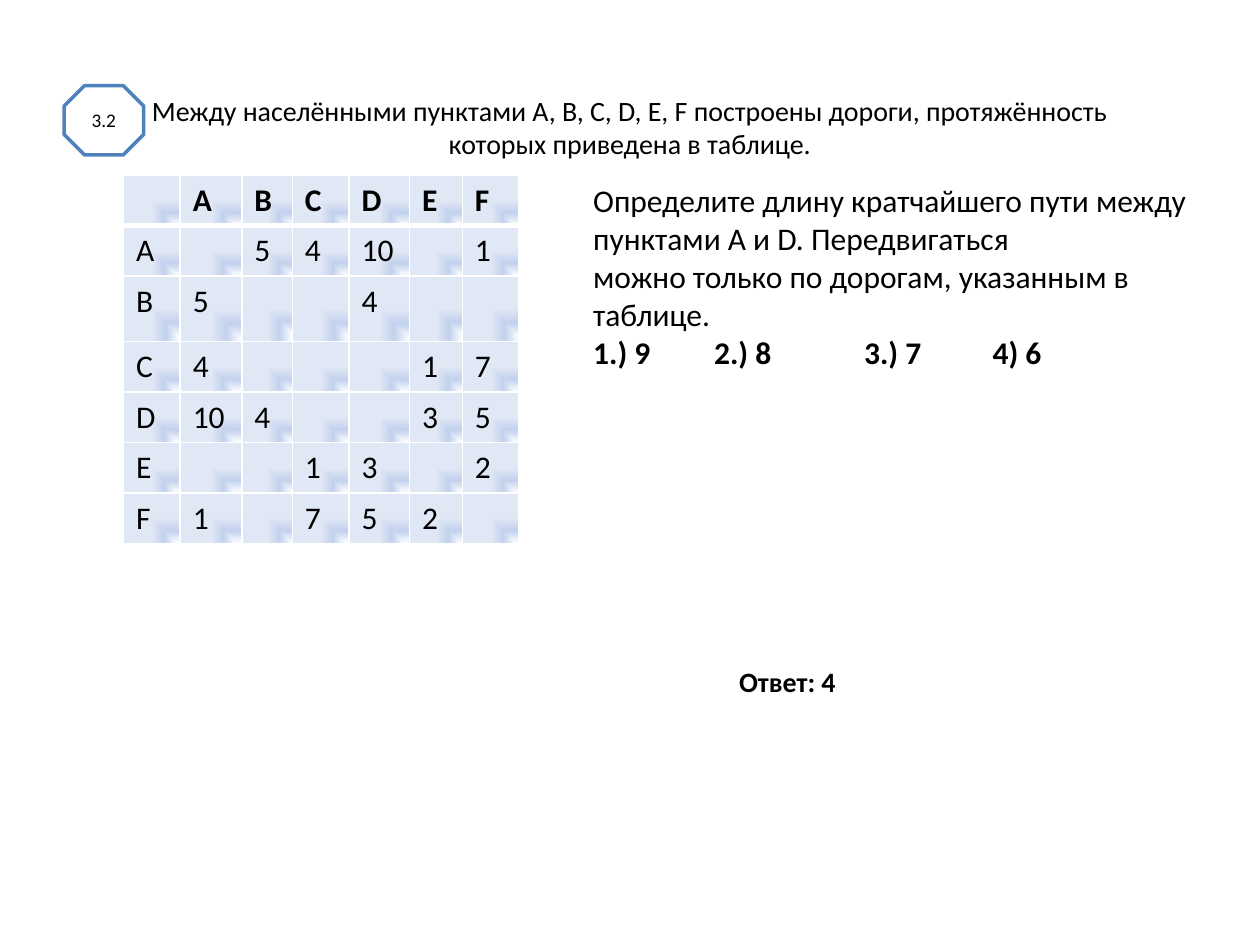
from dataclasses import dataclass

from lxml.etree import SubElement
from pptx import Presentation
from pptx.dml.color import RGBColor
from pptx.enum.shapes import MSO_SHAPE
from pptx.enum.text import MSO_ANCHOR, PP_ALIGN
from pptx.oxml.ns import qn
from pptx.util import Inches, Pt


@dataclass(frozen=True)
class Theme:
    font: str = "Calibri"
    ink: str = "000000"
    paper: str = "FFFFFF"
    edge: str = "4F81BD"
    fade: tuple = ((0, "FFFFFF"), (50, "C2D1ED"), (100, "E1E8F5"))
    small: int = 11
    head: int = 16
    body: int = 18


def node(parent, tag, **attrs):
    return SubElement(parent, qn(tag), {k: str(v) for k, v in attrs.items()})


class Page:
    """Style and slide; lengths are units of a 100 by 75 grid."""

    def __init__(self, deck, theme):
        self.theme = theme
        self.unit = deck.slide_width / 100
        self.slide = deck.slides.add_slide(deck.slide_layouts[6])

    def span(self, *units):
        return [round(n * self.unit) for n in units]

    def run(self, para, text, size, bold=False):
        run = para.add_run()
        run.text = text
        font = run.font
        font.name, font.size, font.bold = self.theme.font, Pt(size), bold
        font.color.rgb = RGBColor.from_string(self.theme.ink)

    def text(self, box, paras, size, align=PP_ALIGN.LEFT, inset=0.5):
        """Each paragraph is (lines, bold, options)."""
        frame = self.slide.shapes.add_textbox(*self.span(*box)).text_frame
        frame.word_wrap = True
        frame.margin_top = self.span(inset)[0]
        for i, (lines, bold, opts) in enumerate(paras):
            para = frame.add_paragraph() if i else frame.paragraphs[0]
            para.alignment = align
            para.space_before = Pt(opts.get("gap", 0))
            props = para._p.get_or_add_pPr()
            if "left" in opts:
                props.set("marL", str(self.span(opts["left"])[0]))
            if "tabs" in opts:
                stops = node(props, "a:tabLst")
                for pos in self.span(*opts["tabs"]):
                    node(stops, "a:tab", pos=pos, algn="l")
            for j, line in enumerate(lines):
                if j:
                    para.add_line_break()
                self.run(para, line, size, bold)

    def badge(self, box, label):
        shape = self.slide.shapes.add_shape(MSO_SHAPE.OCTAGON, *self.span(*box))
        shape.shadow.inherit = False
        shape.fill.solid()
        shape.fill.fore_color.rgb = RGBColor.from_string(self.theme.paper)
        shape.line.color.rgb = RGBColor.from_string(self.theme.edge)
        shape.line.width = Pt(2)
        frame = shape.text_frame
        frame.vertical_anchor = MSO_ANCHOR.MIDDLE
        frame.paragraphs[0].alignment = PP_ALIGN.CENTER
        self.run(frame.paragraphs[0], label, self.theme.small)

    def paint(self, cell, first):
        props = cell._tc.get_or_add_tcPr()
        for side in "LRTB":
            width = Pt(3 if first and side == "B" else 1)
            fill = node(node(props, f"a:ln{side}", w=width), "a:solidFill")
            node(fill, "a:srgbClr", val=self.theme.paper)
        grad = node(props, "a:gradFill", rotWithShape=1)
        stops = node(grad, "a:gsLst")
        for pos, color in self.theme.fade:
            node(node(stops, "a:gs", pos=pos * 1000), "a:srgbClr", val=color)
        shade = node(grad, "a:path", path="rect")
        node(shade, "a:fillToRect", l=100000, t=100000)

    def table(self, left, top, cols, rows, data):
        place = self.span(left, top, sum(cols), sum(rows))
        table = self.slide.shapes.add_table(len(rows), len(cols), *place).table
        table.first_row = table.horz_banding = False
        for col, width in zip(table.columns, self.span(*cols)):
            col.width = width
        for row, height in zip(table.rows, self.span(*rows)):
            row.height = height
        for r, line in enumerate(data):
            for c, value in enumerate(line):
                cell = table.cell(r, c)
                self.paint(cell, r == 0)
                if value:
                    self.run(cell.text_frame.paragraphs[0], str(value),
                             self.theme.body, r == 0)


def main():
    deck = Presentation()
    deck.slide_width, deck.slide_height = Inches(10), Inches(7.5)
    theme = Theme()
    page = Page(deck, theme)

    # Heading, with the answer far below
    intro = ("Между населёнными пунктами A, B, C, D, E, F построены дороги, протяжённость",
             "которых приведена в таблице.")
    page.text((5, 3, 90, 69.9),
              [(intro, False, {}),
               (("Ответ: 4",), True, {"gap": 288, "left": 25})],
              theme.head, PP_ALIGN.CENTER, 4.4)

    # Task number
    page.badge((5.1, 6.8, 6.3, 5.5), "3.2")

    # Road lengths: the same both ways
    towns = "ABCDEF"
    roads = {"AB": 5, "AC": 4, "AD": 10, "AF": 1, "BD": 4,
             "CE": 1, "CF": 7, "DE": 3, "DF": 5, "EF": 2}
    data = [["", *towns]]
    for a in towns:
        data.append([a] + [roads.get("".join(sorted(a + b)), "") for b in towns])
    page.table(9.8, 13.9, (4.5, 4.9, 4, 4.5, 4.8, 4.2, 4.5),
               (3.9, 3.9, 5.2, 3.9, 3.9, 3.9, 3.9), data)

    # Question and choices
    page.text((46.1, 13.9, 50, 16.2), [
        (("Определите длину кратчайшего пути между пунктами A и D. Передвигаться",), False, {}),
        (("можно только по дорогам, указанным в таблице.",), False, {}),
        (("1.) 9\t2.) 8\t3.) 7\t4) 6",), True, {"tabs": (9.6, 21.5, 31.7)}),
    ], theme.body)

    deck.save("out.pptx")


if __name__ == "__main__":
    main()
